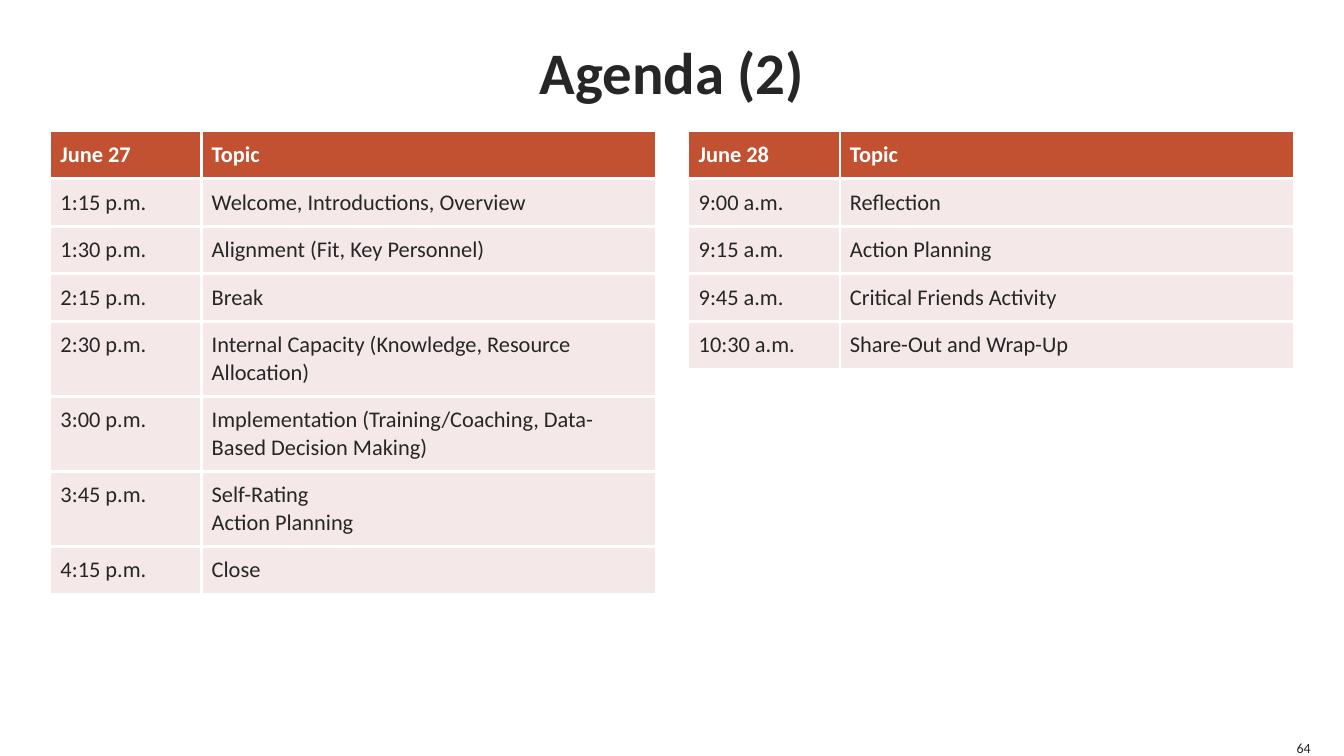
from lxml import etree
from pptx import Presentation
from pptx import util as u
from pptx.dml.color import RGBColor
from pptx.enum import text
from pptx.oxml import ns

WHITE = RGBColor(0xFF, 0xFF, 0xFF)
INK = RGBColor(0x26, 0x26, 0x26)
RUST = RGBColor(0xC2, 0x51, 0x31)
BLUSH = RGBColor(0xF4, 0xE9, 0xE8)
FONT = "Calibri"
WIDTH, HEIGHT = u.Inches(13.33), u.Inches(7.5)
MARGIN = u.Inches(0.5)
TABLE_WIDTH = u.Inches(6)
TABLE_TOP = u.Inches(1.3)
TIME_SHARE = 0.25
PADDING, LINE_HEIGHT = 0.2, 0.27
INNER, OUTER = 2.25, 1

JUNE_27 = [
    ("June 27", "Topic"),
    ("1:15 p.m.", "Welcome, Introductions, Overview"),
    ("1:30 p.m.", "Alignment (Fit, Key Personnel)"),
    ("2:15 p.m.", "Break"),
    ("2:30 p.m.", "Internal Capacity (Knowledge, Resource Allocation)"),
    ("3:00 p.m.", "Implementation (Training/Coaching, Data-Based Decision Making)"),
    ("3:45 p.m.", "Self-Rating\nAction Planning"),
    ("4:15 p.m.", "Close"),
]
JUNE_28 = [
    ("June 28", "Topic"),
    ("9:00 a.m.", "Reflection"),
    ("9:15 a.m.", "Action Planning"),
    ("9:45 a.m.", "Critical Friends Activity"),
    ("10:30 a.m.", "Share-Out and Wrap-Up"),
]


def write(tf, content, size=16, color=INK, bold=False, align=None, inset=0):
    """Fill a text frame, one paragraph per line, with the given format."""
    tf.text = content
    for p in tf.paragraphs:
        p.alignment = align
        for r in p.runs:
            r.font.name, r.font.size = FONT, u.Pt(size)
            r.font.bold, r.font.color.rgb = bold, color
    tf.margin_left = tf.margin_right = u.Inches(inset)
    tf.margin_top = tf.margin_bottom = u.Inches(inset)


def add_borders(cell, widths):
    """Draw white left, right, top and bottom borders of the given widths."""
    tc_pr = cell._tc.get_or_add_tcPr()
    for i, (side, width) in enumerate(zip("LRTB", widths)):
        ln = etree.Element(ns.qn(f"a:ln{side}"), w=str(u.Pt(width)))
        fill = etree.SubElement(ln, ns.qn("a:solidFill"))
        etree.SubElement(fill, ns.qn("a:srgbClr"), val=str(WHITE))
        tc_pr.insert(i, ln)


def add_title(s, content, left, top, width, height):
    """Place the slide title in its placeholder."""
    sp = s.shapes.title
    sp.left, sp.top, sp.width, sp.height = left, top, width, height
    write(sp.text_frame, content, size=42, bold=True, align=text.PP_ALIGN.CENTER)
    sp.text_frame.vertical_anchor = text.MSO_ANCHOR.MIDDLE


def add_agenda(s, rows, left, top, width):
    """Place one day's agenda, with taller rows for two-line topics."""
    lines = [2 if len(topic) > 40 or "\n" in topic else 1 for _, topic in rows]
    heights = [u.Inches(PADDING + LINE_HEIGHT * n) for n in lines]
    table = s.shapes.add_table(len(rows), 2, left, top, width, sum(heights)).table
    table.horz_banding = False
    table.columns[0].width = int(width * TIME_SHARE)
    table.columns[1].width = width - table.columns[0].width
    for i, row in enumerate(rows):
        table.rows[i].height = heights[i]
        header, last = i == 0, i == len(rows) - 1
        for j, content in enumerate(row):
            cell = table.cell(i, j)
            write(cell.text_frame, content, color=WHITE if header else INK, bold=header)
            cell.margin_left = cell.margin_right = u.Inches(PADDING / 2)
            cell.margin_top = cell.margin_bottom = u.Inches(PADDING / 2)
            cell.fill.solid()
            cell.fill.fore_color.rgb = RUST if header else BLUSH
            edges = (j == 0, j == 1, header, last)
            add_borders(cell, [OUTER if edge else INNER for edge in edges])


def add_page_number(s, number, right, bottom, size):
    """Place the page number with its lower right corner at the given point."""
    sp = s.shapes.add_textbox(right - size, bottom - size, size, size)
    tf = sp.text_frame
    write(tf, number, size=10, align=text.PP_ALIGN.RIGHT)
    tf.vertical_anchor = text.MSO_ANCHOR.BOTTOM
    tf.word_wrap = True
    tf.auto_size = text.MSO_AUTO_SIZE.SHAPE_TO_FIT_TEXT


def main():
    """Build the agenda slide and save it."""
    prs = Presentation()
    prs.slide_width, prs.slide_height = WIDTH, HEIGHT
    s = prs.slides.add_slide(prs.slide_layouts[5])
    add_title(s, "Agenda (2)", MARGIN, 0, WIDTH - 2 * MARGIN, u.Inches(1.4))
    add_agenda(s, JUNE_27, MARGIN, TABLE_TOP, TABLE_WIDTH)
    add_agenda(s, JUNE_28, WIDTH - MARGIN - TABLE_WIDTH, TABLE_TOP, TABLE_WIDTH)
    add_page_number(s, "64", u.Inches(13), HEIGHT, u.Inches(0.17))
    prs.save("out.pptx")


if __name__ == "__main__":
    main()
